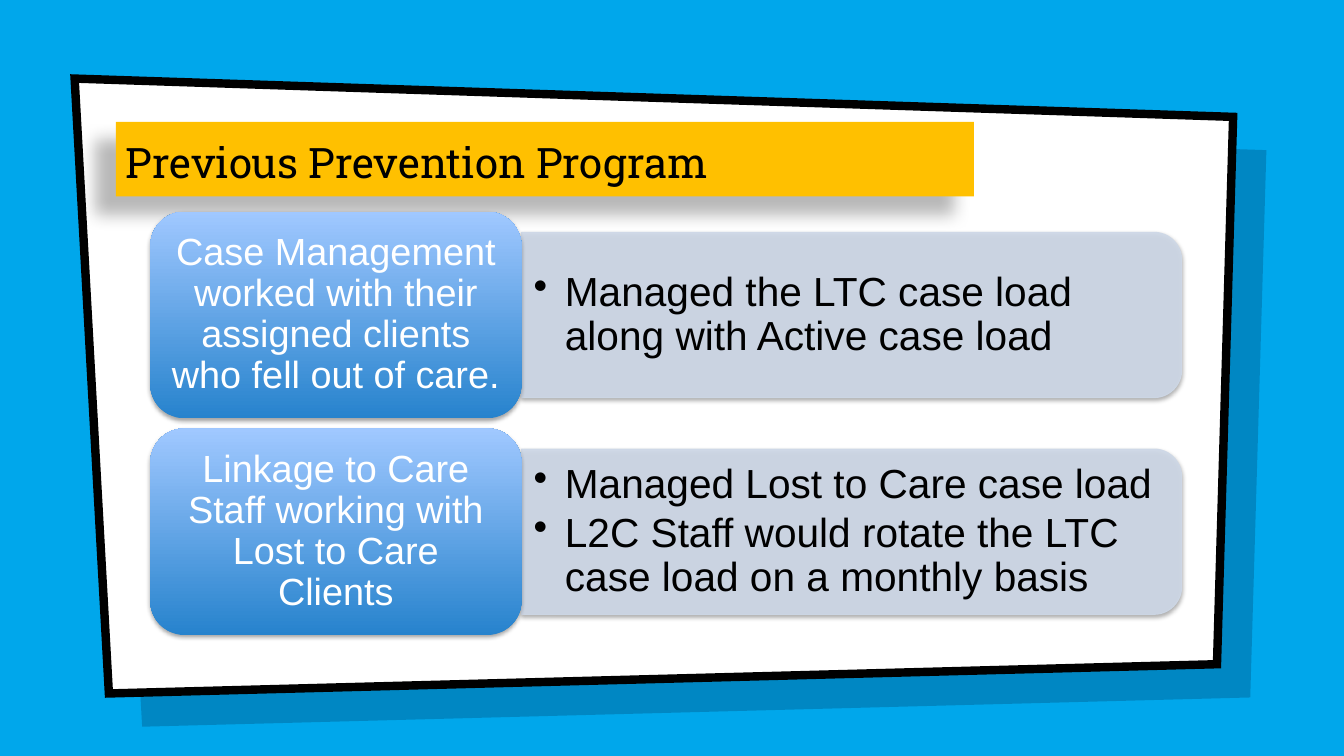
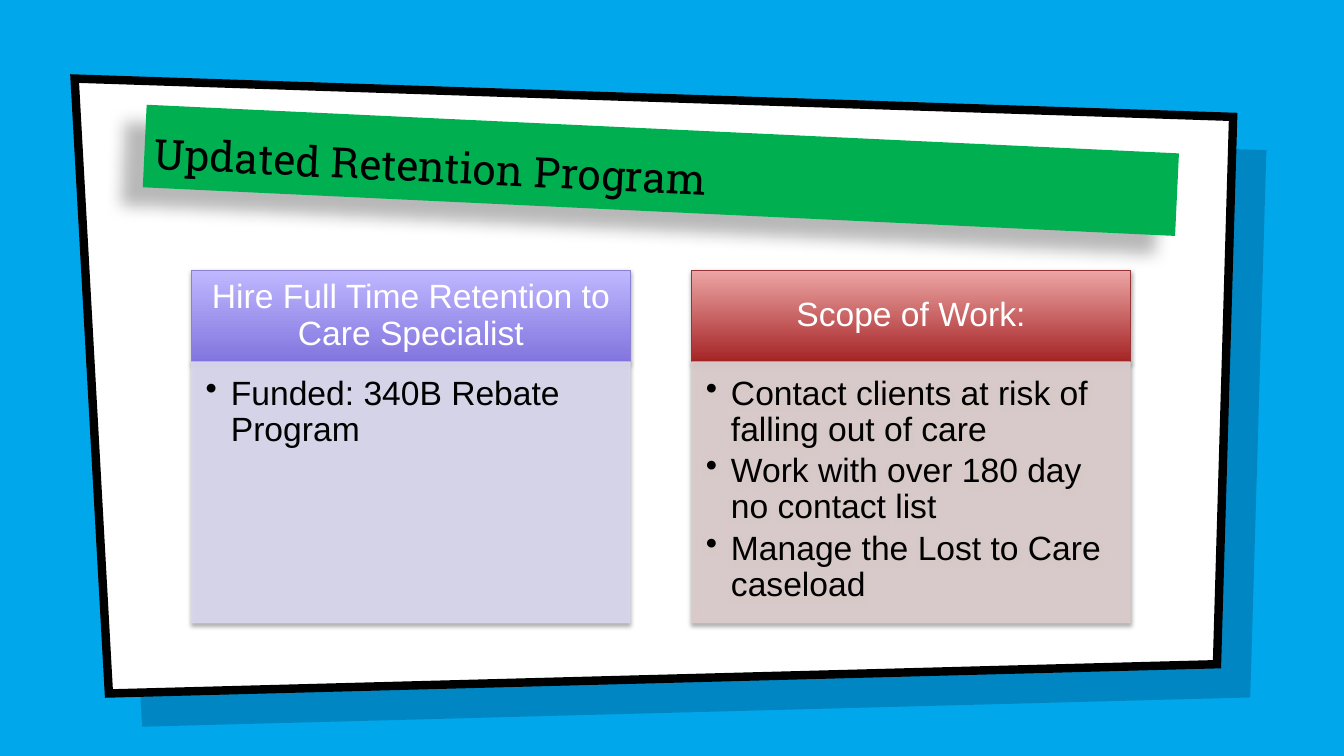
from lxml.etree import SubElement
from pptx import Presentation
from pptx.dml.color import RGBColor
from pptx.enum.shapes import MSO_SHAPE as SHAPE
from pptx.enum.text import MSO_ANCHOR as ANCHOR, PP_ALIGN as ALIGN
from pptx.oxml.ns import qn
from pptx.util import Emu, Inches, Pt

COLORS = {
    "sky": "00A7EB", "navy": "001936", "white": "FFFFFF", "black": "000000",
    "amber": "FFC000", "green": "00B050", "mist": "CED8E7",
    "blue": "2783CD", "blue_light": "A0C8FF",
    "violet": "8275DE", "violet_light": "BFB8FF",
    "violet_line": "8B81D2", "violet_pale": "DAD8EE",
    "red": "A52425", "red_light": "EDA5A5",
    "red_line": "963334", "red_pale": "DDCDCD",
}
BODY_FONT, TITLE_FONT = "Arial", "Roboto Slab"
# opacity %, blur pt, distance pt, direction in degrees
TITLE_SHADOW = (28, 11.8, 19.7, 141)
CARD_SHADOW = (35, 3.1, 1.8, 90)
PANEL = (0.74, 0.78, 11.49, 6.1)
PANEL_OFFSET = 0.33


def rgb(name):
    return RGBColor.from_string(COLORS[name])


def set_alpha(color_format_owner, percent):
    """Make every solid colour below the given XML element translucent."""
    for color in color_format_owner.iter(qn("a:srgbClr")):
        SubElement(color, qn("a:alpha"), val=str(percent * 1000))


def style(sp, fill, line=None, line_width=0.75, alpha=None, shadow=None):
    """Fill is a colour name, or a (bottom, top) pair for a gradient."""
    if isinstance(fill, tuple):
        sp.fill.gradient()
        sp.fill.gradient_angle = 90
        for stop, name in zip(sp.fill.gradient_stops, fill):
            stop.color.rgb = rgb(name)
    else:
        sp.fill.solid()
        sp.fill.fore_color.rgb = rgb(fill)
    if line:
        sp.line.color.rgb = rgb(line)
        sp.line.width = Pt(line_width)
    else:
        sp.line.fill.background()
    props = sp._element.spPr
    if alpha:
        set_alpha(props, alpha)
    sp.shadow.inherit = False
    if shadow:
        opacity, blur, dist, angle = shadow
        outer = SubElement(
            props.find(qn("a:effectLst")), qn("a:outerShdw"),
            blurRad=str(Pt(blur)), dist=str(Pt(dist)),
            dir=str(angle * 60000), algn="ctr", rotWithShape="0")
        color = SubElement(outer, qn("a:srgbClr"), val=COLORS["black"])
        SubElement(color, qn("a:alpha"), val=str(opacity * 1000))


def add_box(slide, kind, box, rotation=0, **look):
    sp = slide.shapes.add_shape(kind, *map(Inches, box))
    sp.rotation = rotation
    style(sp, **look)
    return sp


def write(sp, lines, size, font=BODY_FONT, color="black", align=ALIGN.LEFT,
          anchor=ANCHOR.MIDDLE, insets=(0.1, 0.1, 0.1, 0.1),
          spacing=0.9, bullet_indent=None):
    tf = sp.text_frame
    tf.word_wrap = True
    tf.vertical_anchor = anchor
    (tf.margin_left, tf.margin_top,
     tf.margin_right, tf.margin_bottom) = map(Inches, insets)
    for i, line in enumerate(lines):
        p = tf.add_paragraph() if i else tf.paragraphs[0]
        p.alignment, p.line_spacing = align, spacing
        r = p.add_run()
        r.text = line
        r.font.name, r.font.size = font, Pt(size)
        r.font.color.rgb = rgb(color)
        if bullet_indent:
            p.space_after = Pt(round(0.15 * size, 1))
            props = p._p.get_or_add_pPr()
            props.set("marL", str(Inches(bullet_indent)))
            props.set("indent", str(-Inches(bullet_indent)))
            SubElement(props, qn("a:buChar"), char="•")


def add_panel(slide, box, **look):
    """Draw the slanted sheet inside the box."""
    x, y, w, h = box
    corners = [(0, 0), (w, 0.38), (w - 0.16, h - 0.29), (0.34, h)]
    points = [(Inches(x + dx), Inches(y + dy)) for dx, dy in corners]
    builder = slide.shapes.build_freeform(*points[0], scale=1.0)
    builder.add_line_segments(points[1:], close=True)
    sp = builder.convert_to_shape(Emu(0), Emu(0))
    style(sp, **look)
    return sp


def add_title(slide, text, box, fill, rotation=0):
    sp = add_box(slide, SHAPE.RECTANGLE, box, rotation,
                 fill=fill, shadow=TITLE_SHADOW)
    write(sp, [text], 30, font=TITLE_FONT, anchor=ANCHOR.BOTTOM, spacing=1)


def new_slide(prs):
    slide = prs.slides.add_slide(prs.slide_layouts[6])
    slide.background.fill.solid()
    slide.background.fill.fore_color.rgb = rgb("sky")
    x, y, w, h = PANEL
    add_panel(slide, (x + PANEL_OFFSET, y + PANEL_OFFSET, w, h),
              fill="navy", alpha=22)
    sheet = add_panel(slide, PANEL, fill="white", line="black", line_width=6)
    SubElement(sheet.line._get_or_add_ln(), qn("a:miter"), lim="800000")
    return slide


def add_labelled_row(slide, box, label, bullets):
    """Place a rounded label and, to its right, a lower band of bullets."""
    x, y, w, h = box
    label_w, band_h = 0.36 * w, 0.8 * h
    band_x, band_w = x + label_w, w - label_w
    upright = (band_x + (band_w - band_h) / 2, y + (h - band_w) / 2,
               band_h, band_w)
    add_box(slide, SHAPE.ROUND_2_SAME_RECTANGLE, upright, 90,
            fill="mist", line="mist", alpha=90, shadow=CARD_SHADOW)
    text_h = band_h - 0.16
    text_box = (band_x, y + (h - text_h) / 2, band_w - 0.08, text_h)
    write(slide.shapes.add_textbox(*map(Inches, text_box)), bullets, 29,
          insets=(0.12, 0.06, 0.12, 0.06), bullet_indent=0.31)
    sp = add_box(slide, SHAPE.ROUNDED_RECTANGLE, (x, y, label_w, h),
                 fill=("blue", "blue_light"), shadow=CARD_SHADOW)
    write(sp, [label], 27, color="white", align=ALIGN.CENTER,
          insets=(0.11, 0.06, 0.11, 0.06))


def add_card(slide, box, hue, heading, bullets):
    """Place a gradient heading over a pale body of bullets."""
    x, y, w, h = box
    head_h = 0.26 * h
    head = add_box(slide, SHAPE.RECTANGLE, (x, y, w, head_h),
                   fill=(hue, f"{hue}_light"), line=f"{hue}_line",
                   shadow=CARD_SHADOW)
    write(head, [heading], 24, color="white", align=ALIGN.CENTER,
          insets=(0.19, 0.11, 0.19, 0.11))
    pale = f"{hue}_pale"
    body = add_box(slide, SHAPE.RECTANGLE, (x, y + head_h, w, h - head_h),
                   fill=pale, line=pale, alpha=90, shadow=CARD_SHADOW)
    write(body, bullets, 24, anchor=ANCHOR.TOP,
          insets=(0.14, 0.14, 0.19, 0.21), bullet_indent=0.25)


def previous_program(prs):
    slide = new_slide(prs)
    add_title(slide, "Previous Prevention Program",
              (1.15, 1.21, 8.51, 0.74), "amber")
    rows = [
        ("Case Management worked with their assigned clients "
         "who fell out of care.",
         ["Managed the LTC case load along with Active case load"]),
        ("Linkage to Care Staff working with Lost to Care Clients",
         ["Managed Lost to Care case load",
          "L2C Staff would rotate the LTC case load on a monthly basis"]),
    ]
    row_h, gap = 2.05, 0.1
    for i, row in enumerate(rows):
        add_labelled_row(
            slide, (1.49, 2.1 + i * (row_h + gap), 10.23, row_h), *row)


def updated_program(prs):
    slide = new_slide(prs)
    add_title(slide, "Updated Retention Program",
              (1.43, 1.28, 10.25, 0.82), "green", rotation=2.7)
    cards = [
        ("violet", "Hire Full Time Retention to Care Specialist",
         ["Funded: 340B Rebate Program"]),
        ("red", "Scope of Work:",
         ["Contact clients at risk of falling out of care",
          "Work with over 180 day no contact list",
          "Manage the Lost to Care caseload"]),
    ]
    card_w, gap = 4.35, 0.61
    for i, card in enumerate(cards):
        add_card(slide, (1.9 + i * (card_w + gap), 2.68, card_w, 3.5), *card)


def main():
    prs = Presentation()
    prs.slide_width, prs.slide_height = Inches(13.33), Inches(7.5)
    previous_program(prs)
    updated_program(prs)
    prs.save("out.pptx")


if __name__ == "__main__":
    main()
